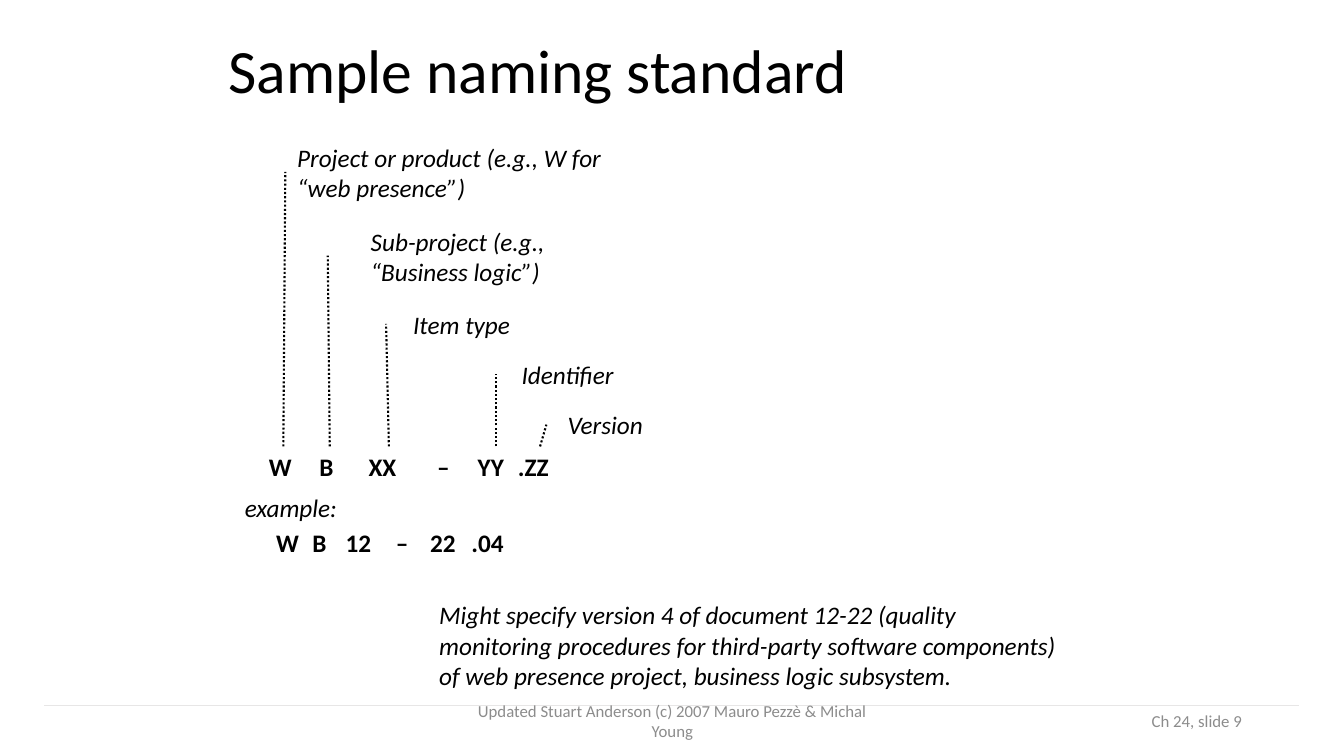
import pptx
import pptx.util
import pptx.dml.color
import pptx.enum.dml
import pptx.enum.shapes
import pptx.enum.text
import lxml.etree

Cm = pptx.util.Cm
Pt = pptx.util.Pt
ALIGN = pptx.enum.text.PP_ALIGN
ANCHOR = pptx.enum.text.MSO_ANCHOR
DASH = pptx.enum.dml.MSO_LINE

COLORS = {"ink": "000000", "footer": "8C8C8C", "rule": "E7E6E6"}
FONT = "Calibri"
LINE_HEIGHT = 1.02

TITLE = "Sample naming standard"
CREDIT = "Updated Stuart Anderson (c) 2007 Mauro Pezzè & Michal Young"
PAGE_NUMBER = "Ch 24, slide 9"
EXPLANATION = (
    "Might specify version 4 of document 12-22 (quality monitoring procedures for "
    "third-party software components) of web presence project, business logic subsystem."
)

# text, left, top, width, height, x of the code part the leader reaches
LABELS = [
    ("Project or product (e.g., W for “web presence”)", 7.19, 3.43, 8.26, 1.8, 7.14),
    ("Sub-project (e.g., “Business logic”)", 8.26, 5.54, 6.55, 1.8, 8.31),
    ("Item type", 9.73, 7.65, 3.81, LINE_HEIGHT, 9.8),
    ("Identifier", 12.5, 8.92, 3.61, LINE_HEIGHT, 12.5),
    ("Version", 13.77, 10.19, 2.97, LINE_HEIGHT, 13.61),
]

PATTERN_TOP = 11.25
CODE_ROWS = [
    (PATTERN_TOP, [("W", 6.53, 1.22), ("B", 7.8, 0.99), ("XX", 9.04, 1.47),
                   ("–", 10.77, 0.97), ("YY", 11.79, 1.45), (".ZZ", 12.8, 1.63)]),
    (13.16, [("W", 6.71, 1.22), ("B", 7.62, 0.99), ("12", 8.46, 1.42),
             ("–", 9.73, 0.97), ("22", 10.59, 1.42), (".04", 11.63, 1.65)]),
]


def color(name):
    """Return the named palette colour."""
    return pptx.dml.color.RGBColor.from_string(COLORS[name])


def add_text(page, text, left, top, width, height, size=18, ink="ink", bold=False,
             italic=False, align=ALIGN.LEFT, anchor=ANCHOR.BOTTOM, wrap=True, centred=False):
    """Add a one-paragraph text box and return its paragraph."""
    box = page.shapes.add_textbox(Cm(left), Cm(top), Cm(width), Cm(height))
    frame = box.text_frame
    frame.word_wrap = wrap
    frame.vertical_anchor = anchor
    if centred:
        frame._txBody.bodyPr.set("anchorCtr", "1")
    para = frame.paragraphs[0]
    para.alignment = align
    span = para.add_run()
    span.text = text
    span.font.name = FONT
    span.font.size = Pt(size)
    span.font.bold = bold
    span.font.italic = italic
    span.font.color.rgb = color(ink)
    return para


def add_line(page, start, end, ink, width, dash=None):
    """Add a straight line without a shadow."""
    line = page.shapes.add_connector(
        pptx.enum.shapes.MSO_CONNECTOR.STRAIGHT, *(Cm(value) for value in start + end))
    line.line.color.rgb = color(ink)
    line.line.width = Pt(width)
    if dash:
        line.line.dash_style = dash
    lxml.etree.SubElement(line._element.spPr, pptx.oxml.ns.qn("a:effectLst"))


def main():
    """Build the naming standard slide."""
    deck = pptx.Presentation()
    deck.slide_width, deck.slide_height = Cm(33.87), Cm(19.05)
    page = deck.slides.add_slide(deck.slide_layouts[6])

    add_line(page, (1.12, 17.78), (32.74, 17.78), "rule", 0.75)
    title = add_text(page, TITLE, 5.51, 0.76, 22.86, 2.21, size=44, anchor=ANCHOR.MIDDLE)
    title.line_spacing = 0.9
    for text, left, width, align in [(CREDIT, 11.23, 11.43, ALIGN.CENTER),
                                     (PAGE_NUMBER, 23.93, 7.62, ALIGN.RIGHT)]:
        add_text(page, text, left, 17.65, width, LINE_HEIGHT, size=12, ink="footer",
                 align=align, anchor=ANCHOR.MIDDLE)

    for text, left, top, width, height, foot in LABELS:
        add_text(page, text, left, top, width, height, italic=True, centred=True)
        add_line(page, (foot, PATTERN_TOP), (left, top + height / 2), "ink", 1.5,
                 DASH.ROUND_DOT)

    for top, parts in CODE_ROWS:
        for text, left, width in parts:
            add_text(page, text, left, top, width, LINE_HEIGHT, bold=True, wrap=False)

    add_text(page, "example:", 5.92, 12.27, 3.51, LINE_HEIGHT, italic=True, wrap=False)
    add_text(page, EXPLANATION, 10.8, 14.17, 16.08, 3.35, italic=True, centred=True)
    deck.save("out.pptx")


if __name__ == "__main__":
    main()
